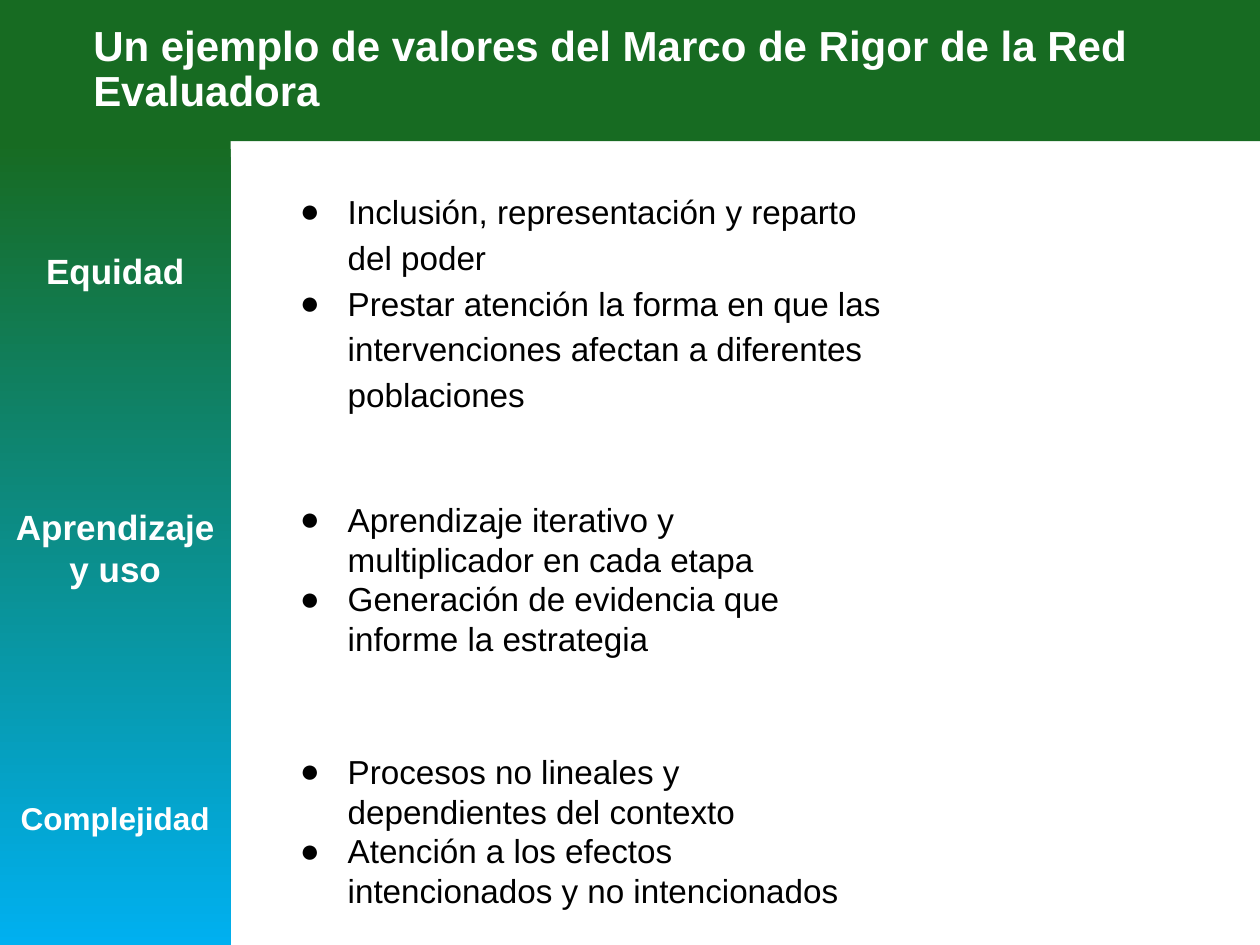
from dataclasses import dataclass

from lxml.etree import SubElement
from pptx import Presentation
from pptx.dml.color import RGBColor
from pptx.enum.shapes import MSO_SHAPE
from pptx.enum.text import MSO_ANCHOR, MSO_AUTO_SIZE, PP_ALIGN
from pptx.oxml.ns import qn
from pptx.util import Inches, Pt

COLORS = {"green": "176B22", "blue": "00B0F0", "white": "FFFFFF", "black": "000000"}
SIDEBAR_W = 1.83
HEADER_H = 1.12
LIST_X = 2.16


@dataclass
class Value:
    name: str
    name_top: float
    name_h: float
    name_size: int
    idx: int
    list_top: float
    list_w: float
    list_h: float
    spacing: float
    points: tuple[str, ...]


VALUES = [
    Value("Equidad", 1.88, 0.79, 20, 1, 1.37, 5.06, 4.22, 1.15,
          ("Inclusión, representación y reparto del poder",
           "Prestar atención la forma en que las intervenciones afectan a diferentes poblaciones")),
    Value("Aprendizaje y uso", 3.91, 0.79, 20, 2, 3.86, 4.83, 1.58, 1.0,
          ("Aprendizaje iterativo y multiplicador en cada etapa",
           "Generación de evidencia que informe la estrategia")),
    Value("Complejidad", 6.24, 0.51, 18, 4, 5.86, 4.83, 0.9, 1.0,
          ("Procesos no lineales y dependientes del contexto",
           "Atención a los efectos intencionados y no intencionados")),
]


def rgb(name: str) -> RGBColor:
    return RGBColor.from_string(COLORS[name])


def place(sp, x: float, y: float, w: float, h: float) -> None:
    sp.left, sp.top, sp.width, sp.height = map(Inches, (x, y, w, h))


def set_frame(tf, inset: float, anchor: MSO_ANCHOR) -> None:
    tf.word_wrap = True
    tf.auto_size = MSO_AUTO_SIZE.NONE
    tf.vertical_anchor = anchor
    tf.margin_left = tf.margin_right = tf.margin_top = tf.margin_bottom = Inches(inset)


def format_par(p, size: int, color: str, bold: bool, align: PP_ALIGN, spacing: float = 1.0) -> None:
    p.alignment = align
    p.line_spacing = spacing
    p.space_before = p.space_after = Pt(0)
    for r in p.runs:
        r.font.name = "Arial"
        r.font.size = Pt(size)
        r.font.bold = bold
        r.font.color.rgb = rgb(color)


def add_bullet(p) -> None:
    pPr = p._p.get_or_add_pPr()
    pPr.set("marL", str(Inches(0.5)))
    pPr.set("indent", str(Inches(-0.38)))
    buClr = SubElement(pPr, qn("a:buClr"))
    SubElement(buClr, qn("a:srgbClr"), val=COLORS["black"])
    SubElement(pPr, qn("a:buFont"), typeface="Arial")
    SubElement(pPr, qn("a:buChar"), char="●")


def add_band(s, kind: MSO_SHAPE, x: float, y: float, w: float, h: float, *colors: str) -> None:
    sp = s.shapes.add_shape(kind, *map(Inches, (x, y, w, h)))
    sp.shadow.inherit = False
    sp.line.fill.background()
    if len(colors) == 1:
        sp.fill.solid()
        sp.fill.fore_color.rgb = rgb(colors[0])
    else:
        sp.fill.gradient()
        sp.fill.gradient_angle = 270
        for stop, color in zip(sp.fill.gradient_stops, colors):
            stop.color.rgb = rgb(color)
    s.shapes._spTree.insert(2, sp._element)


def set_title(s, text: str) -> None:
    sp = s.shapes.title
    place(sp, 0.69, 0.11, 8.62, 0.9)
    tf = sp.text_frame
    tf.text = text
    set_frame(tf, 0.05, MSO_ANCHOR.MIDDLE)
    format_par(tf.paragraphs[0], 24, "white", True, PP_ALIGN.LEFT, 0.9)


def add_value(s, v: Value) -> None:
    label = s.shapes.add_textbox(*map(Inches, (0, v.name_top, SIDEBAR_W, v.name_h)))
    tf = label.text_frame
    tf.text = v.name
    set_frame(tf, 0.1, MSO_ANCHOR.TOP)
    format_par(tf.paragraphs[0], v.name_size, "white", True, PP_ALIGN.CENTER)

    body = s.placeholders[v.idx]
    place(body, LIST_X, v.list_top, v.list_w, v.list_h)
    tf = body.text_frame
    tf.text = "\n".join(v.points)
    set_frame(tf, 0.1, MSO_ANCHOR.TOP)
    for p in tf.paragraphs:
        add_bullet(p)
        format_par(p, 19, "black", False, PP_ALIGN.LEFT, v.spacing)


def main() -> None:
    """Build the slide of framework values and save it."""
    prs = Presentation()
    prs.slide_width, prs.slide_height = Inches(10), Inches(7.5)
    s = prs.slides.add_slide(prs.slide_layouts[4])
    unused = s.placeholders[3]._element
    unused.getparent().remove(unused)
    add_band(s, MSO_SHAPE.FLOWCHART_PROCESS, 0, HEADER_H, SIDEBAR_W, 7.5 - HEADER_H, "green", "blue")
    add_band(s, MSO_SHAPE.RECTANGLE, 0, 0, 10, HEADER_H, "green")
    set_title(s, "Un ejemplo de valores del Marco de Rigor de la Red Evaluadora")
    for v in VALUES:
        add_value(s, v)
    prs.save("out.pptx")


if __name__ == "__main__":
    main()
